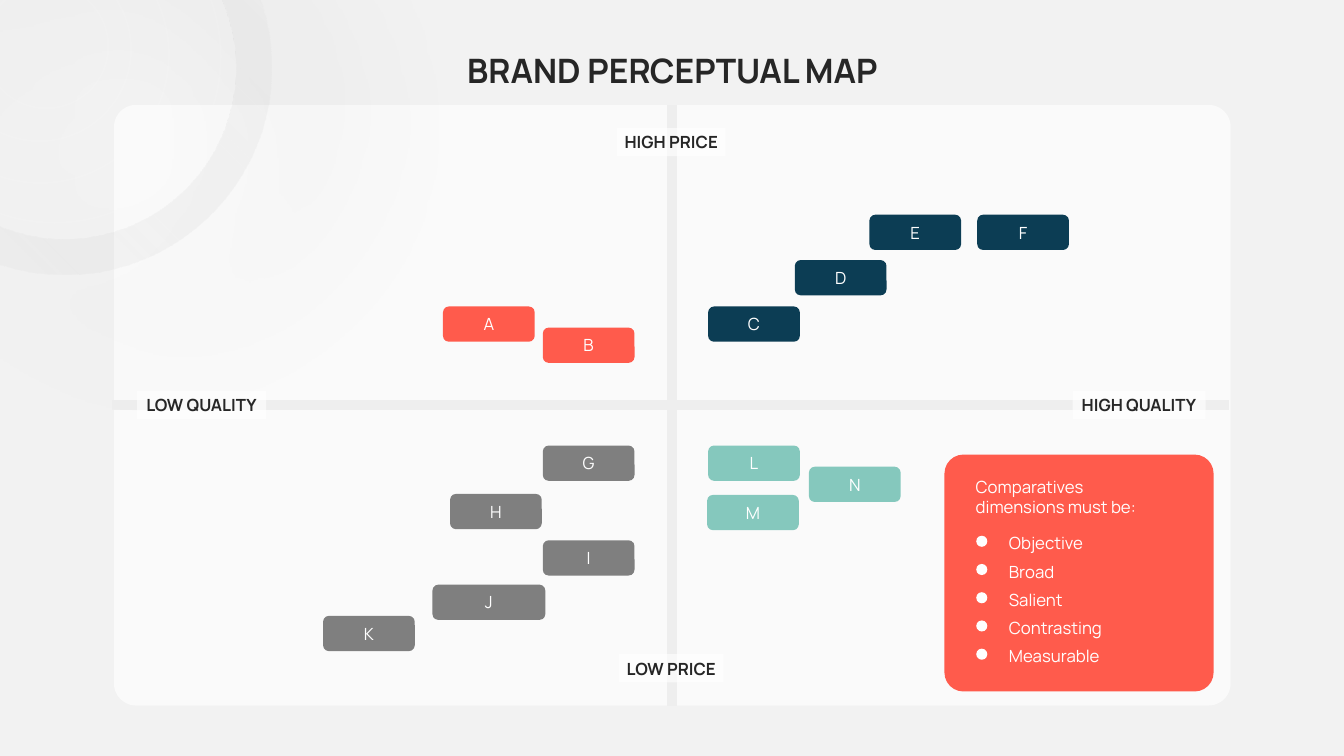
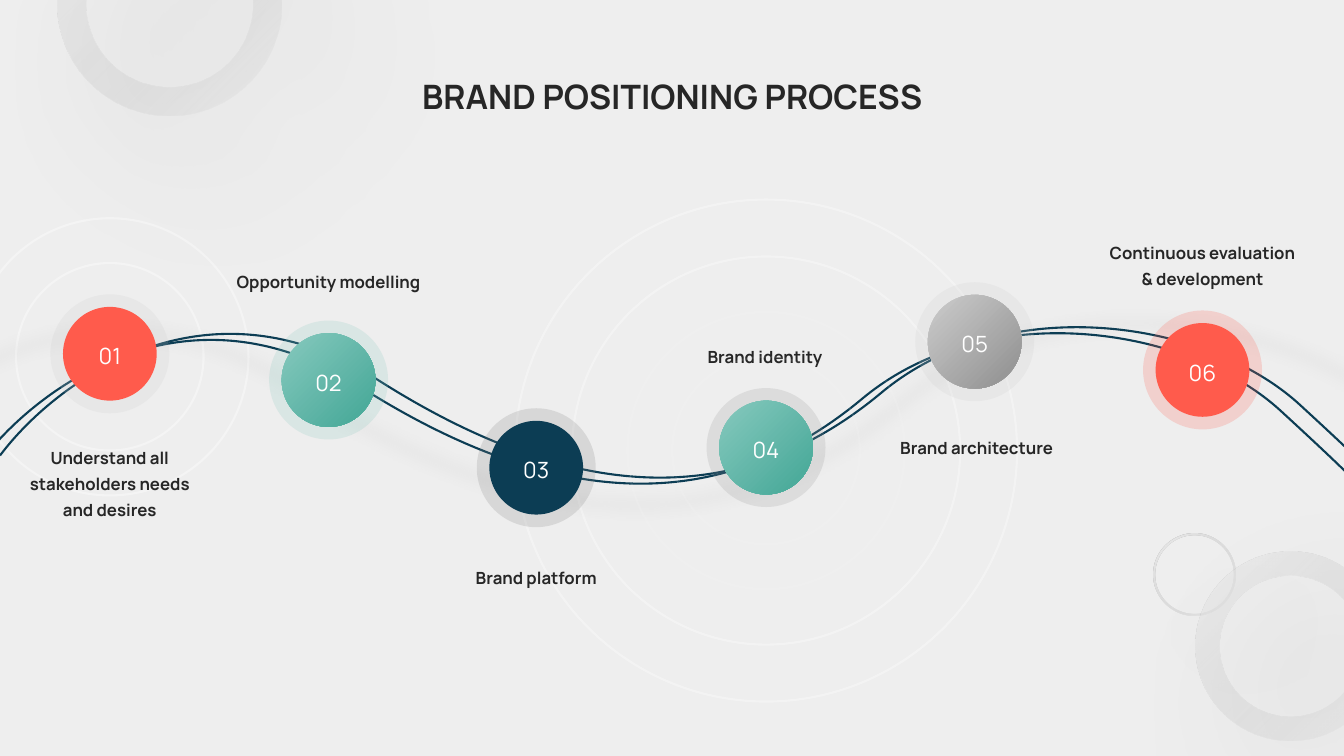
from lxml.etree import SubElement
from pptx import Presentation
from pptx.dml.color import RGBColor
from pptx.enum.shapes import MSO_CONNECTOR, MSO_SHAPE
from pptx.enum.text import MSO_ANCHOR, PP_ALIGN
from pptx.oxml.ns import qn
from pptx.util import Inches, Pt

# Shared style
WHITE = RGBColor(0xFF, 0xFF, 0xFF)
BLACK = RGBColor(0x00, 0x00, 0x00)
INK = RGBColor(0x26, 0x26, 0x26)
PALE = RGBColor(0xF2, 0xF2, 0xF2)
MIST = RGBColor(0xEE, 0xEE, 0xEE)
CORAL = RGBColor(0xFF, 0x5B, 0x4C)
NAVY = RGBColor(0x0C, 0x3D, 0x54)
TEAL = RGBColor(0x85, 0xC8, 0xBD)
DEEP_TEAL = RGBColor(0x4D, 0xAC, 0x9C)
GREY = RGBColor(0x7F, 0x7F, 0x7F)
MID_GREY = RGBColor(0x95, 0x95, 0x95)
DARK_SILVER = RGBColor(0x98, 0x98, 0x98)
SILVER = RGBColor(0xCB, 0xCB, 0xCB)
BLUE = RGBColor(0x35, 0x53, 0xD3)

HEIGHT = 7.5
WIDTH = HEIGHT * 16 / 9
FONT = "Manrope"
TITLE = {"name": FONT, "size": Pt(24), "bold": True}
STRONG = {"name": FONT, "size": Pt(12), "bold": True}
BODY = {"name": FONT, "size": Pt(12), "bold": False}
NUMBER = {"name": FONT, "size": Pt(16), "bold": False}
NO_INSETS = (0, 0, 0, 0)
SHAPE_INSETS = (0.1, 0.05, 0.1, 0.05)

# Shadows: colour, opacity %, blur pt, distance pt, direction, scale %
RING_SHADOW = (BLUE, 5, 52, 4, 90, 100)
DONUT_SHADOW = (BLACK, 40, 100, 65, 45, 100)
CURVE_SHADOW = (GREY, 25, 11, 4, 90, 120)

# Perceptual map content
MAP_TITLE = "BRAND PERCEPTUAL MAP"
MAP_AREA = (1.13, 1.04, 11.08, 5.96)
AXIS_X, AXIS_Y = WIDTH / 2, 4.02
AXIS_LABELS = [  # text, centre x, centre y, width
    ("LOW QUALITY", 2.0, AXIS_Y, 1.28),
    ("HIGH QUALITY", 11.3, AXIS_Y, 1.32),
    ("HIGH PRICE", 6.66, 1.41, 1.08),
    ("LOW PRICE", 6.66, 6.63, 1.04),
]
TILE_WIDTH, TILE_HEIGHT = 0.91, 0.35
BRANDS = {  # colour: name, centre x, top
    CORAL: [("A", 4.85, 3.04), ("B", 5.84, 3.25)],
    NAVY: [("C", 7.48, 3.04), ("D", 8.34, 2.58), ("E", 9.08, 2.13), ("F", 10.15, 2.13)],
    GREY: [("G", 5.84, 4.42), ("H", 4.92, 4.9), ("I", 5.84, 5.36), ("J", 4.85, 5.8), ("K", 3.66, 6.11)],
    TEAL: [("L", 7.48, 4.42), ("M", 7.47, 4.91), ("N", 8.48, 4.63)],
}
WIDE_TILES = {"J": 1.12}
NOTE_INTRO = "Comparatives dimensions must be:"
NOTE_ITEMS = ["Objective", "Broad", "Salient", "Contrasting", "Measurable"]
MAP_RINGS = [  # centre x, centre y, diameter
    (0.54, 0.56, 3.3), (0.4, 0.54, 2.55), (0.39, 0.49, 1.82), (0.46, 0.46, 1.23),
]

# Positioning process content
PROCESS_TITLE = "BRAND POSITIONING PROCESS"
TEAL_BLEND, SILVER_BLEND = (TEAL, DEEP_TEAL), (SILVER, DARK_SILVER)
STEPS = [  # centre x, centre y, fill, halo, label, label box
    (1.09, 3.51, CORAL, SILVER, "Understand all stakeholders needs and desires", (0.26, 4.38, 1.66, 0.67)),
    (3.26, 3.77, TEAL_BLEND, TEAL, "Opportunity modelling", (2.32, 2.64, 1.88, 0.44)),
    (5.32, 4.64, NAVY, GREY, "Brand platform", (4.49, 5.57, 1.66, 0.22)),
    (7.6, 4.44, TEAL_BLEND, MID_GREY, "Brand identity", (6.76, 3.38, 1.66, 0.22)),
    (9.67, 3.39, SILVER_BLEND, SILVER, "Brand architecture", (8.86, 4.28, 1.66, 0.22)),
    (11.93, 3.67, CORAL, CORAL, "Continuous evaluation & development", (10.94, 2.35, 1.98, 0.44)),
]
CURVE_BOX = (0, 3.25, 13.71, 1.56)
CURVE_START = (0, 4.52)
CURVE = [  # two control points and an end point
    ((0.53, 3.81), (2.02, 2.67), (3.75, 3.77)),
    ((5.92, 5.15), (7.5, 4.93), (8.74, 3.9)),
    ((9.97, 2.87), (11.98, 3.17), (12.9, 4.02)),
    ((13.64, 4.7), (13.75, 4.83), (13.71, 4.81)),
]
BACK_RINGS = [  # centre x, centre y, diameter, opacity %
    (7.6, 4.47, 4.98, 35), (7.6, 4.47, 3.85, 35), (1.09, 3.54, 2.75, 39), (1.09, 3.54, 1.86, 39),
]
FRONT_RINGS = [(7.6, 4.47, 2.75, 9), (7.6, 4.47, 1.86, 9)]
PROCESS_DONUTS = [  # centre x, centre y, diameter, thickness, opacity %
    (11.85, 5.7, 0.81, 0.026, 65), (12.8, 6.41, 1.88, 0.129, 40), (1.68, 0.04, 2.22, 0.129, 41),
]


# Formatting helpers
def add_colour(parent, colour, opacity=100):
    element = SubElement(parent, qn("a:srgbClr"), val=str(colour))
    if opacity < 100:
        SubElement(element, qn("a:alpha"), val=str(opacity * 1000))


def paint(fill_format, element, colour, opacity=100):
    """Solid fill on a shape or on its outline."""
    fill_format.solid()
    fill_format.fore_color.rgb = colour
    if opacity < 100:
        colour_element = element.find(qn("a:solidFill")).find(qn("a:srgbClr"))
        SubElement(colour_element, qn("a:alpha"), val=str(opacity * 1000))


def blend(shape, stops):
    """Diagonal gradient from (position %, colour, opacity %) stops."""
    shape.fill.gradient()
    shape.fill.gradient_angle = 315
    stop_list = shape._element.spPr.find(qn("a:gradFill")).find(qn("a:gsLst"))
    for old_stop in list(stop_list):
        stop_list.remove(old_stop)
    for position, colour, opacity in stops:
        stop = SubElement(stop_list, qn("a:gs"), pos=str(position * 1000))
        add_colour(stop, colour, opacity)


def set_shadow(shape, shadow):
    colour, opacity, blur, distance, direction, scale = shadow
    effects = shape._element.spPr.find(qn("a:effectLst"))
    outer = SubElement(
        effects, qn("a:outerShdw"), blurRad=str(Pt(blur)), dist=str(Pt(distance)),
        dir=str(direction * 60000), sx=str(scale * 1000), sy=str(scale * 1000),
        algn="ctr", rotWithShape="0")
    add_colour(outer, colour, opacity)


def write(shape, text, font, colour, align=PP_ALIGN.CENTER, anchor=MSO_ANCHOR.MIDDLE,
          insets=NO_INSETS, spacing=None, wrap=True):
    frame = shape.text_frame
    frame.word_wrap, frame.vertical_anchor = wrap, anchor
    for side, inset in zip(("left", "top", "right", "bottom"), insets):
        setattr(frame, f"margin_{side}", Inches(inset))
    paragraph = frame.paragraphs[0]
    paragraph.alignment = align
    if spacing:
        paragraph.line_spacing = spacing
    run = paragraph.add_run()
    run.text = text
    for attribute, value in font.items():
        setattr(run.font, attribute, value)
    run.font.color.rgb = colour


# Drawing helpers
def add_shape(slide, kind, box, fill=None, opacity=100, adjustment=None):
    shape = slide.shapes.add_shape(kind, *map(Inches, box))
    shape.shadow.inherit = False
    shape.line.fill.background()
    if fill is None:
        shape.fill.background()
    else:
        paint(shape.fill, shape._element.spPr, fill, opacity)
    if adjustment is not None:
        shape.adjustments[0] = adjustment
    return shape


def around(x, y, width, height):
    return x - width / 2, y - height / 2, width, height


def add_circle(slide, x, y, diameter, kind=MSO_SHAPE.OVAL, **options):
    return add_shape(slide, kind, around(x, y, diameter, diameter), **options)


def add_ring(slide, x, y, diameter, opacity):
    ring = add_circle(slide, x, y, diameter)
    ring.line.width = Pt(1.5)
    paint(ring.line.fill, ring._element.spPr.find(qn("a:ln")), WHITE, opacity)
    set_shadow(ring, RING_SHADOW)


def add_donut(slide, x, y, diameter, thickness, opacity, flipped=False):
    donut = add_circle(slide, x, y, diameter, MSO_SHAPE.DONUT, adjustment=thickness)
    blend(donut, [(0, MIST, opacity), (2, MIST, opacity), (100, GREY, 0)])
    if flipped:
        donut._element.spPr.find(qn("a:xfrm")).set("flipH", "1")
    set_shadow(donut, DONUT_SHADOW)


def add_text(slide, box, text, font, colour, **options):
    write(slide.shapes.add_textbox(*map(Inches, box)), text, font, colour, **options)


def add_axis(slide, start, end):
    axis = slide.shapes.add_connector(MSO_CONNECTOR.STRAIGHT, *map(Inches, start + end))
    axis.line.width, axis.line.color.rgb = Pt(7), MIST
    SubElement(axis._element.spPr, qn("a:effectLst"))


def add_curve(slide, shift_x=0, shift_y=0, shadow=None):
    left, top, width, height = CURVE_BOX
    builder = slide.shapes.build_freeform(*map(Inches, CURVE_START))
    builder.add_line_segments([tuple(map(Inches, points[-1])) for points in CURVE], close=False)
    curve = builder.convert_to_shape()
    curve.left, curve.top = Inches(left + shift_x), Inches(top + shift_y)
    curve.width, curve.height = Inches(width), Inches(height)

    # Turn the straight segments into Bezier segments
    outline = next(curve._element.iter(qn("a:path")))
    for segment in list(outline):
        outline.remove(segment)
    outline.set("w", str(Inches(width)))
    outline.set("h", str(Inches(height)))
    for points in [(CURVE_START,), *CURVE]:
        tag = "a:moveTo" if len(points) == 1 else "a:cubicBezTo"
        segment = SubElement(outline, qn(tag))
        for x, y in points:
            SubElement(segment, qn("a:pt"), x=str(Inches(x - left)), y=str(Inches(y - top)))

    curve.shadow.inherit = False
    curve.fill.background()
    curve.line.width, curve.line.color.rgb = Pt(1.5), NAVY
    if shadow:
        set_shadow(curve, shadow)


def add_slide(presentation, background):
    slide = presentation.slides.add_slide(presentation.slide_layouts[6])
    slide.background.fill.solid()
    slide.background.fill.fore_color.rgb = background
    return slide


# Slides
def build_map(presentation):
    slide = add_slide(presentation, PALE)
    left, top, width, height = MAP_AREA
    add_shape(slide, MSO_SHAPE.ROUNDED_RECTANGLE, MAP_AREA, WHITE, 62, 0.037)
    add_axis(slide, (AXIS_X, top + height), (AXIS_X, top))
    add_axis(slide, (12.19, AXIS_Y), (1.11, AXIS_Y))
    for text, x, y, label_width in AXIS_LABELS:
        label = add_shape(slide, MSO_SHAPE.RECTANGLE, around(x, y, label_width, 0.28), WHITE, 62)
        write(label, text, STRONG, INK, insets=(0.04,) * 4, wrap=False)

    # Note card
    add_shape(slide, MSO_SHAPE.ROUNDED_RECTANGLE, (9.37, 4.51, 2.67, 2.35), CORAL, adjustment=0.08)
    note_text = {"align": PP_ALIGN.LEFT, "anchor": MSO_ANCHOR.TOP}
    add_text(slide, (9.68, 4.73, 1.87, 0.4), NOTE_INTRO, BODY, WHITE, **note_text)
    for row, item in enumerate(NOTE_ITEMS):
        y = 5.29 + row * 0.28
        add_text(slide, (10.01, y, 1.54, 0.2), item, BODY, WHITE, **note_text)
        add_circle(slide, 9.74, y + 0.08, 0.11, fill=WHITE)

    add_text(slide, (left, 0.28, width, 0.49), MAP_TITLE, TITLE, INK,
             anchor=MSO_ANCHOR.TOP, spacing=1.53)
    for colour, tiles in BRANDS.items():
        for name, x, y in tiles:
            tile_width = WIDE_TILES.get(name, TILE_WIDTH)
            box = (x - tile_width / 2, y, tile_width, TILE_HEIGHT)
            tile = add_shape(slide, MSO_SHAPE.ROUNDED_RECTANGLE, box, colour, adjustment=0.167)
            write(tile, name, BODY, WHITE, insets=SHAPE_INSETS)

    # Corner decoration
    add_donut(slide, 0.64, 0.67, 4.1, 0.087, 21, flipped=True)
    for ring in MAP_RINGS:
        add_ring(slide, *ring, opacity=8)


def build_process(presentation):
    slide = add_slide(presentation, MIST)
    for ring in BACK_RINGS:
        add_ring(slide, *ring)
    add_curve(slide)
    add_text(slide, (2.83, 0.75, 7.68, 0.4), PROCESS_TITLE, TITLE, INK)
    add_curve(slide, -0.19, 0.06, CURVE_SHADOW)

    for number, (x, y, fill, halo, label, label_box) in enumerate(STEPS, 1):
        add_circle(slide, x, y, 1.18, fill=halo, opacity=20)
        if isinstance(fill, RGBColor):
            disc = add_circle(slide, x, y, 0.93, fill=fill)
        else:
            light, dark = fill
            disc = add_circle(slide, x, y, 0.93)
            blend(disc, [(0, light, 100), (2, light, 100), (85, dark, 100), (100, dark, 100)])
        write(disc, f"{number:02}", NUMBER, WHITE, insets=SHAPE_INSETS, spacing=1.17)
        add_text(slide, label_box, label, STRONG, INK, anchor=MSO_ANCHOR.TOP, spacing=1.3)

    for ring in FRONT_RINGS:
        add_ring(slide, *ring)
    for donut in PROCESS_DONUTS:
        add_donut(slide, *donut)


def main():
    presentation = Presentation()
    presentation.slide_width, presentation.slide_height = Inches(WIDTH), Inches(HEIGHT)
    build_map(presentation)
    build_process(presentation)
    presentation.save("out.pptx")


if __name__ == "__main__":
    main()
